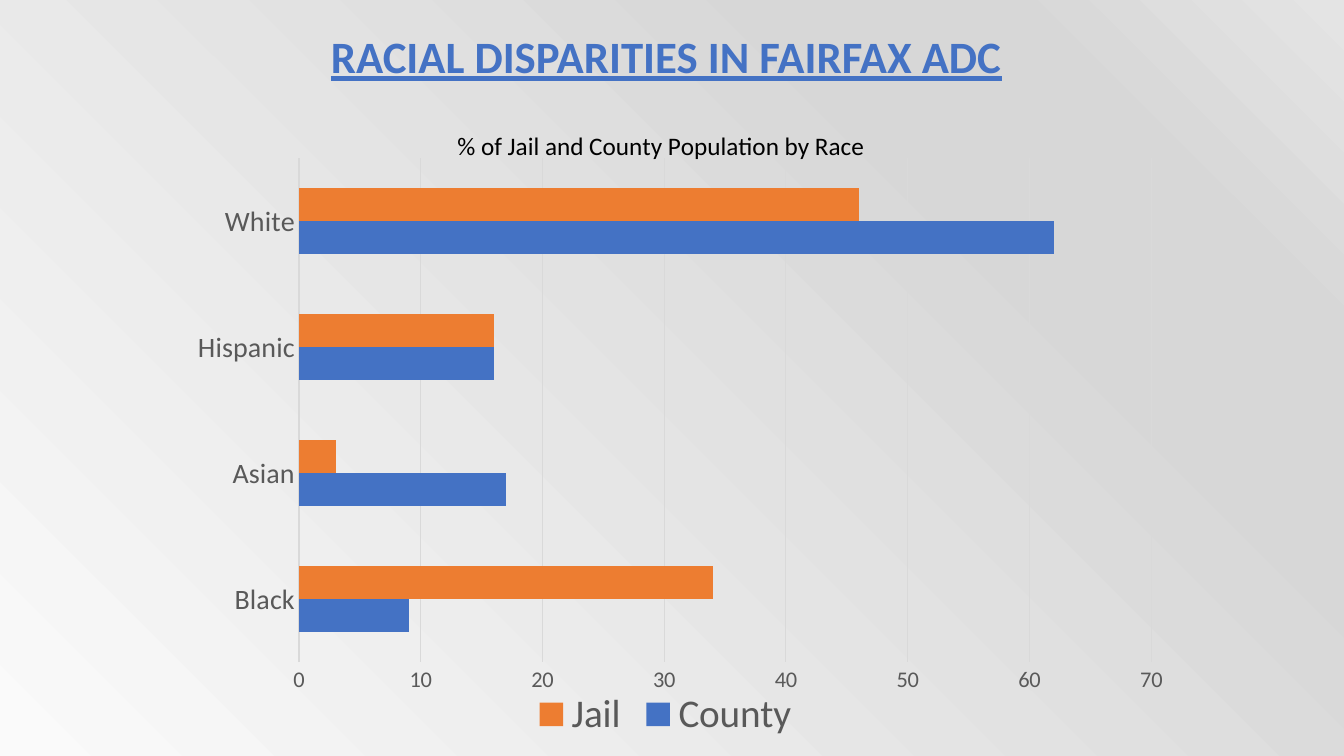
from lxml import etree
from pptx import Presentation, util as u
from pptx.chart.data import CategoryChartData
from pptx.dml.color import RGBColor
from pptx.enum import chart as ch, text
from pptx.oxml import parse_xml
from pptx.oxml.ns import qn

COLORS = {"County": "4472C4", "Jail": "ED7D31", "title": "4472C4",
          "black": "000000", "label": "595959", "line": "D9D9D9"}
BACKDROP = {0: "FAFAFA", 74: "D7D7D7", 83: "D7D7D7", 100: "E4E4E4"}
RACES = ["Black", "Asian", "Hispanic", "White"]
SHARES = {"County": [9, 17, 16, 62], "Jail": [34, 3, 16, 46]}
FONT = "Calibri"
WIDTH, HEIGHT = u.Inches(13.33), u.Inches(7.5)


def rgb(name):
    """Return the named colour."""
    return RGBColor.from_string(COLORS[name])


def set_font(font, size, color, bold=False):
    """Set family, size, colour and weight of a font."""
    font.name, font.size, font.bold = FONT, u.Pt(size), bold
    font.color.rgb = rgb(color)


def set_line(line, color):
    """Give a chart line its thin stroke."""
    line.color.rgb = rgb(color)
    line.width = u.Pt(0.75)


def paint_background(slide):
    """Fill the slide with a diagonal grey gradient."""
    fill = slide.background.fill
    fill.gradient()
    fill.gradient_angle = 45
    stops = slide.background._cSld.find(".//" + qn("a:gsLst"))
    for gs in list(stops):
        stops.remove(gs)
    for share, color in BACKDROP.items():
        gs = etree.SubElement(stops, qn("a:gs"), pos=str(share * 1000))
        etree.SubElement(gs, qn("a:srgbClr"), val=color)


def add_title(slide, box):
    """Write the underlined slide title in the box."""
    tf = slide.shapes.add_textbox(*box).text_frame
    tf.word_wrap = True
    p = tf.paragraphs[0]
    p.text = "RACIAL DISPARITIES IN FAIRFAX ADC"
    p.alignment = text.PP_ALIGN.CENTER
    set_font(p.font, 32, "title", True)
    p.font.underline = True


def place(parent, **layout):
    """Put a manual layout, in shares of the chart, into a chart part."""
    for old in parent.findall(qn("c:layout")):
        parent.remove(old)
    xml = "".join(f'<c:{tag} val="{val}"/>' for tag, val in layout.items())
    node = parse_xml(
        '<c:layout xmlns:c="http://schemas.openxmlformats.org/drawingml/2006/chart">'
        f"<c:manualLayout>{xml}</c:manualLayout></c:layout>")
    parent.insert(1 if parent.find(qn("c:tx")) is not None else 0, node)


def add_race_chart(slide, box):
    """Draw the clustered bars of jail and county shares in the box."""
    data = CategoryChartData()
    data.categories = RACES
    for name, values in SHARES.items():
        data.add_series(name, values)
    chart = slide.shapes.add_chart(ch.XL_CHART_TYPE.BAR_CLUSTERED, *box, data).chart
    set_font(chart.font, 10, "black")

    tf = chart.chart_title.text_frame
    tf.text = "% of Jail and County Population by Race"
    set_font(tf.paragraphs[0].font, 18, "black")
    place(chart.chart_title._element, xMode="edge", yMode="edge", x=0.29, y=0.04)

    plot = chart.plots[0]
    plot.gap_width, plot.overlap, plot.vary_by_categories = 182, 0, False
    for series in plot.series:
        series.format.fill.solid()
        series.format.fill.fore_color.rgb = rgb(series.name)
    place(chart._chartSpace.chart.plotArea, layoutTarget="inner", xMode="edge",
          yMode="edge", x=0.138, y=0.093, w=0.842, h=0.778)

    for axis, size in ((chart.category_axis, 20), (chart.value_axis, 16)):
        axis.major_tick_mark = axis.minor_tick_mark = ch.XL_TICK_MARK.NONE
        set_font(axis.tick_labels.font, size, "label")
    set_line(chart.category_axis.format.line, "line")
    values = chart.value_axis
    values.format.line.fill.background()
    values.minimum_scale, values.maximum_scale, values.major_unit = 0, 70, 10
    set_line(values.major_gridlines.format.line, "line")

    chart.has_legend = True
    chart.legend.position = ch.XL_LEGEND_POSITION.BOTTOM
    chart.legend.include_in_layout = False
    set_font(chart.legend.font, 28, "label")


def main():
    """Build and save the slide."""
    prs = Presentation()
    prs.slide_width, prs.slide_height = WIDTH, HEIGHT
    slide = prs.slides.add_slide(prs.slide_layouts[6])
    paint_background(slide)
    add_title(slide, [u.Inches(n) for n in (1.26, 0.24, 10.7, 0.64)])
    add_race_chart(slide, [u.Inches(n) for n in (1.58, 0.97, 10.04, 6.43)])
    prs.save("out.pptx")


if __name__ == "__main__":
    main()
